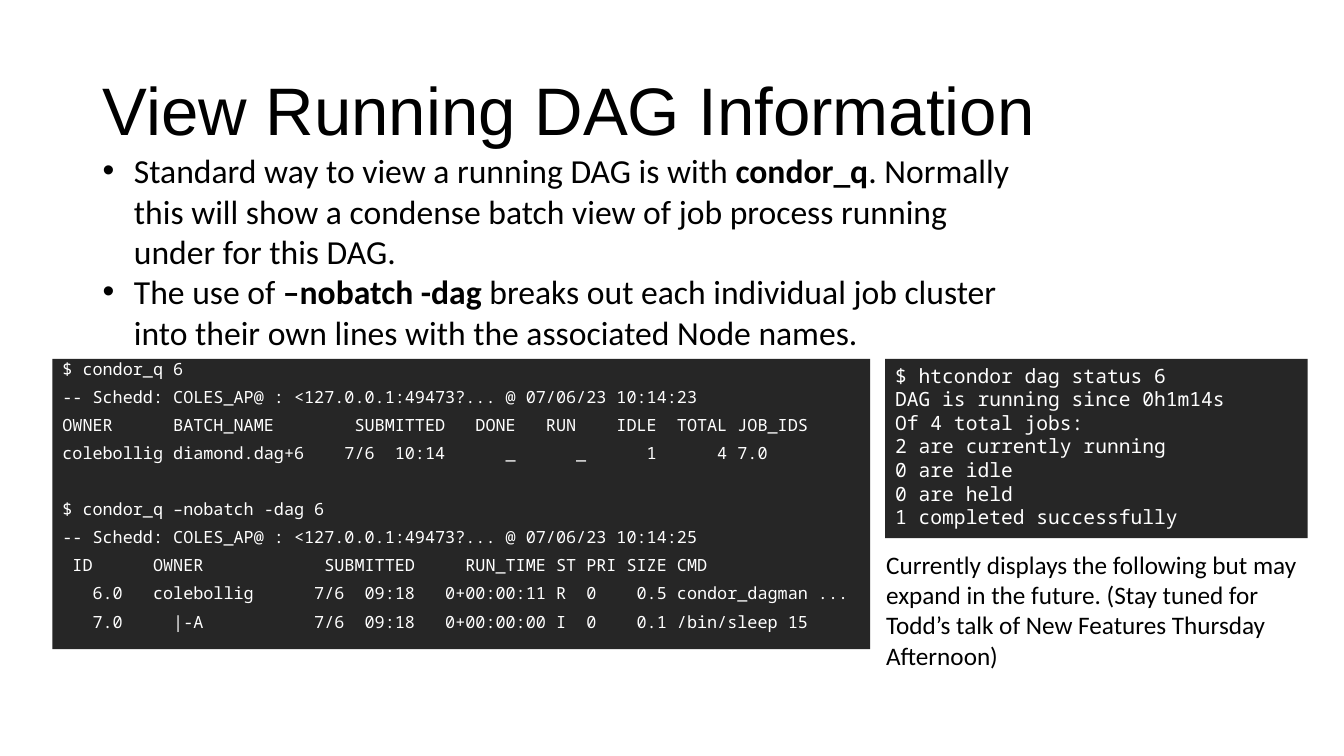
from dataclasses import dataclass
from functools import partial

from lxml import etree
from pptx import Presentation
from pptx.dml.color import RGBColor
from pptx.enum import shapes, text
from pptx.oxml import ns
from pptx.util import Pt

PX = 9144


@dataclass(frozen=True)
class Theme:
    ink: str = "000000"
    terminal: str = "262626"
    terminal_ink: str = "FFFFFF"
    heading: str = "Arial"
    prose: str = "Calibri"
    code: str = "Noto Sans Mono"
    title_size: int = 48
    body_size: int = 24
    note_size: int = 18
    status_size: int = 14
    queue_size: int = 12


THEME = Theme()

QUEUE_SESSIONS = [
    [
        "$ condor_q 6",
        "-- Schedd: COLES_AP@ : <127.0.0.1:49473?... @ 07/06/23 10:14:23",
        "OWNER      BATCH_NAME        SUBMITTED   DONE   RUN    IDLE  TOTAL JOB_IDS",
        "colebollig diamond.dag+6    7/6  10:14      _      _      1      4 7.0",
    ],
    [
        "$ condor_q –nobatch -dag 6",
        "-- Schedd: COLES_AP@ : <127.0.0.1:49473?... @ 07/06/23 10:14:25",
        " ID      OWNER            SUBMITTED     RUN_TIME ST PRI SIZE CMD",
        "   6.0   colebollig      7/6  09:18   0+00:00:11 R  0    0.5 condor_dagman ...",
        "   7.0     |-A           7/6  09:18   0+00:00:00 I  0    0.1 /bin/sleep 15",
    ],
]
STATUS_LINES = [
    "$ htcondor dag status 6",
    "DAG is running since 0h1m14s",
    "Of 4 total jobs:",
    "2 are currently running",
    "0 are idle",
    "0 are held",
    "1 completed successfully",
]
BULLETS = [
    [
        ("Standard way to view a running DAG is with ", False),
        ("condor_q", True),
        (". Normally this will show a condense batch view of job process running under for this DAG.", False),
    ],
    [
        ("The use of ", False),
        ("–nobatch -dag", True),
        (" breaks out each individual job cluster into their own lines with the associated Node names.", False),
    ],
]
NOTE = (
    "Currently displays the following but may expand in the future. "
    "(Stay tuned for Todd’s talk of New Features Thursday Afternoon)"
)


def add_span(para, words, font, size, color, bold=False):
    span = para.add_run()
    span.text = words
    span.font.name = font
    span.font.size = Pt(size)
    span.font.bold = bold
    span.font.color.rgb = RGBColor.from_string(color)


def add_para(frame, spans, before=0, spacing=None, bullet=False, **style):
    first = not frame.paragraphs[0].runs
    para = frame.paragraphs[0] if first else frame.add_paragraph()
    para.alignment = text.PP_ALIGN.LEFT
    if spacing:
        para.line_spacing = spacing
    if before and not first:
        para.space_before = Pt(before)
    if bullet:
        props = para._p.get_or_add_pPr()
        props.set("marL", str(31 * PX))
        props.set("indent", str(-31 * PX))
        etree.SubElement(props, ns.qn("a:buFont")).set("typeface", THEME.heading)
        etree.SubElement(props, ns.qn("a:buChar")).set("char", "•")
    for words, bold in spans:
        add_span(para, words, bold=bold, **style)


def add_frame(page, box, fill=None, anchor=text.MSO_ANCHOR.TOP):
    place = [side * PX for side in box]
    if fill:
        shape = page.shapes.add_shape(shapes.MSO_SHAPE.RECTANGLE, *place)
        shape.shadow.inherit = False
        shape.fill.solid()
        shape.fill.fore_color.rgb = RGBColor.from_string(fill)
        shape.line.fill.background()
    else:
        shape = page.shapes.add_textbox(*place)
    frame = shape.text_frame
    frame.word_wrap = True
    frame.vertical_anchor = anchor
    return frame


def add_title(page, box):
    frame = add_frame(page, box, anchor=text.MSO_ANCHOR.MIDDLE)
    add_para(frame, [("View Running DAG Information", False)], spacing=0.9,
             font=THEME.heading, size=THEME.title_size, color=THEME.ink)


def add_bullets(page, box):
    frame = add_frame(page, box)
    for spans in BULLETS:
        add_para(frame, spans, bullet=True,
                 font=THEME.prose, size=THEME.body_size, color=THEME.ink)


def add_terminal(page, box, sessions, size, before=0, session_gap=0, spacing=None):
    frame = add_frame(page, box, fill=THEME.terminal)
    add_line = partial(add_para, frame, spacing=spacing, font=THEME.code,
                       size=size, color=THEME.terminal_ink)
    for lines in sessions:
        for index, line in enumerate(lines):
            add_line([(line, False)], before=before if index else session_gap)


def add_note(page, box):
    frame = add_frame(page, box)
    add_para(frame, [(NOTE, False)],
             font=THEME.prose, size=THEME.note_size, color=THEME.ink)


def main():
    deck = Presentation()
    deck.slide_width, deck.slide_height = 1333 * PX, 750 * PX
    page = deck.slides.add_slide(deck.slide_layouts[6])
    add_title(page, (92, 40, 1150, 145))
    add_terminal(page, (52, 356, 811, 288), QUEUE_SESSIONS, THEME.queue_size,
                 before=10, session_gap=30, spacing=0.7)
    add_bullets(page, (92, 144, 928, 212))
    add_terminal(page, (878, 356, 419, 178), [STATUS_LINES], THEME.status_size)
    add_note(page, (869, 540, 451, 131))
    deck.save("out.pptx")


if __name__ == "__main__":
    main()
